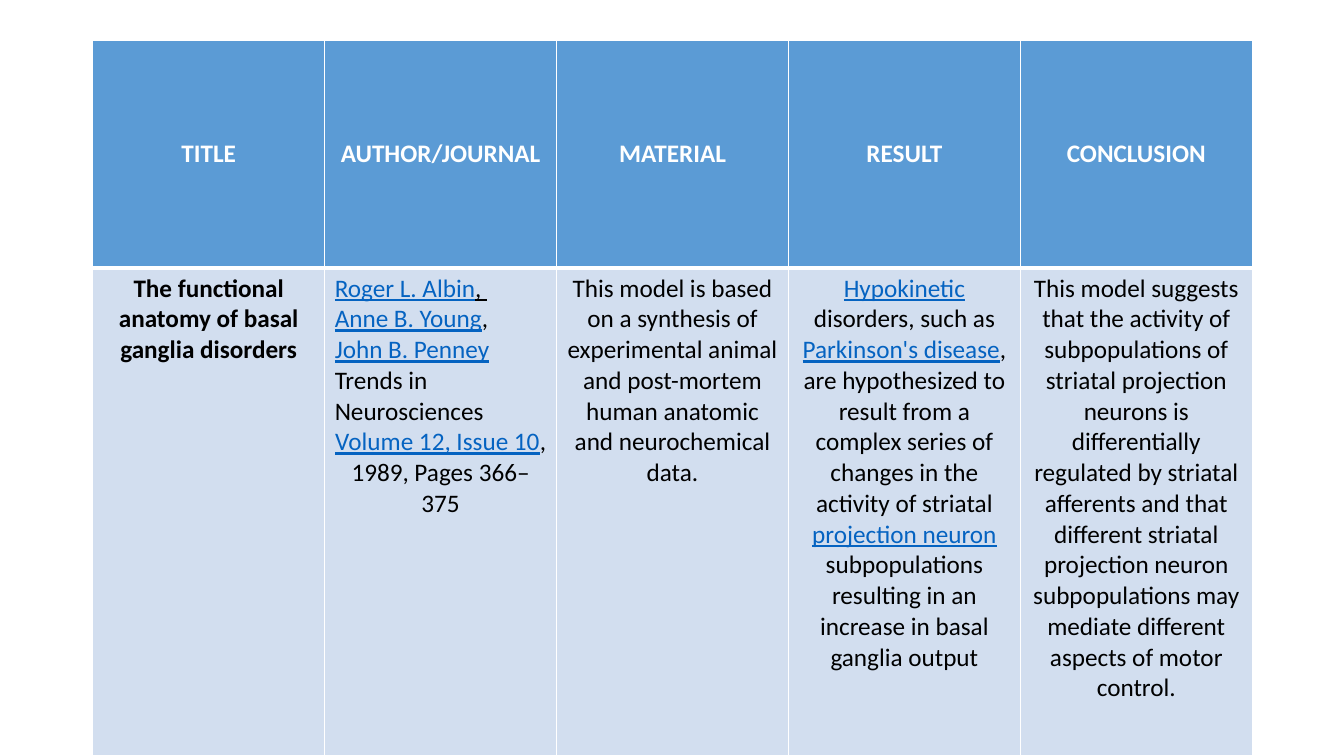
from lxml.etree import SubElement
from pptx import Presentation
from pptx.dml.color import RGBColor
from pptx.enum.text import MSO_ANCHOR, PP_ALIGN
from pptx.oxml.ns import qn
from pptx.util import Inches, Pt

WHITE, BLACK, BLUE, PALE, LINK = "FFFFFF", "000000", "5B9BD5", "D2DEEF", "0563C1"
LEFT, CENTER = PP_ALIGN.LEFT, PP_ALIGN.CENTER

HEADS = ["TITLE", "AUTHOR/JOURNAL", "MATERIAL", "RESULT", "CONCLUSION"]


def tint(code):
    """Turn a hex string into a colour."""
    return RGBColor.from_string(code)


def write(para, text, color=BLACK, bold=False, line=False):
    """Add one formatted run to a paragraph."""
    run = para.add_run()
    run.text = text
    font = run.font
    font.name, font.size = "Calibri", Pt(18)
    font.bold, font.underline = bold, line
    font.color.rgb = tint(color)


def link(text):
    """Give the text and format of a linked term."""
    return text, {"color": LINK, "line": True}


def plain(text, **style):
    """Give the text and format of ordinary words."""
    return text, style


BODY = [
    [(CENTER, [plain("The functional anatomy of basal ganglia disorders", bold=True)])],
    [
        (LEFT, [link("Roger L. Albin"), plain(", ", line=True)]),
        (LEFT, [link("Anne B. Young"), plain(",")]),
        (LEFT, [link("John B. Penney")]),
        (LEFT, [plain("Trends in")]),
        (LEFT, [plain("Neurosciences")]),
        (CENTER, [link("Volume 12, Issue 10"), plain(", 1989, Pages 366–375")]),
    ],
    [(CENTER, [plain(
        "This model is based on a synthesis of experimental animal and "
        "post-mortem human anatomic and neurochemical data.")])],
    [(CENTER, [
        link("Hypokinetic"),
        plain(" disorders, such as "),
        link("Parkinson's disease"),
        plain(", are hypothesized to result from a complex series of "
              "changes in the activity of striatal "),
        link("projection neuron"),
        plain(" subpopulations resulting in an increase in basal ganglia output"),
    ])],
    [(CENTER, [plain(
        "This model suggests that the activity of subpopulations of striatal "
        "projection neurons is differentially regulated by striatal afferents "
        "and that different striatal projection neuron subpopulations may "
        "mediate different aspects of motor control.")])],
]


def edge(cell, top, bottom):
    """Draw white borders around a cell."""
    props = cell._tc.get_or_add_tcPr()
    for side, width in (("L", 1), ("R", 1), ("T", top), ("B", bottom)):
        line = SubElement(props, qn(f"a:ln{side}"), w=str(Pt(width)))
        fill = SubElement(line, qn("a:solidFill"))
        SubElement(fill, qn("a:srgbClr"), val=WHITE)


def fill_cell(cell, paras, fill, anchor, top, bottom):
    """Style a cell and write its paragraphs."""
    edge(cell, top, bottom)
    cell.fill.solid()
    cell.fill.fore_color.rgb = tint(fill)
    cell.vertical_anchor = anchor
    frame = cell.text_frame
    for i, (align, runs) in enumerate(paras):
        para = frame.add_paragraph() if i else frame.paragraphs[0]
        para.alignment = align
        for text, style in runs:
            write(para, text, **style)


def add_review(slide, left, top, width, height):
    """Place the literature table in the given box."""
    box = map(Inches, (left, top, width, height))
    table = slide.shapes.add_table(2, len(HEADS), *box).table
    head = 2.26
    table.rows[0].height = Inches(head)
    table.rows[1].height = Inches(height - head)
    for i, (title, paras) in enumerate(zip(HEADS, BODY)):
        table.columns[i].width = Inches(width / len(HEADS))
        label = [(CENTER, [plain(title, color=WHITE, bold=True)])]
        fill_cell(table.cell(0, i), label, BLUE, MSO_ANCHOR.MIDDLE, 1, 3)
        fill_cell(table.cell(1, i), paras, PALE, MSO_ANCHOR.TOP, 3, 1)


def main():
    """Build and save the slide."""
    deck = Presentation()
    deck.slide_width, deck.slide_height = Inches(13.33), Inches(7.5)
    slide = deck.slides.add_slide(deck.slide_layouts[6])
    add_review(slide, 0.92, 0.4, 11.5, 7.1)
    deck.save("out.pptx")


if __name__ == "__main__":
    main()
